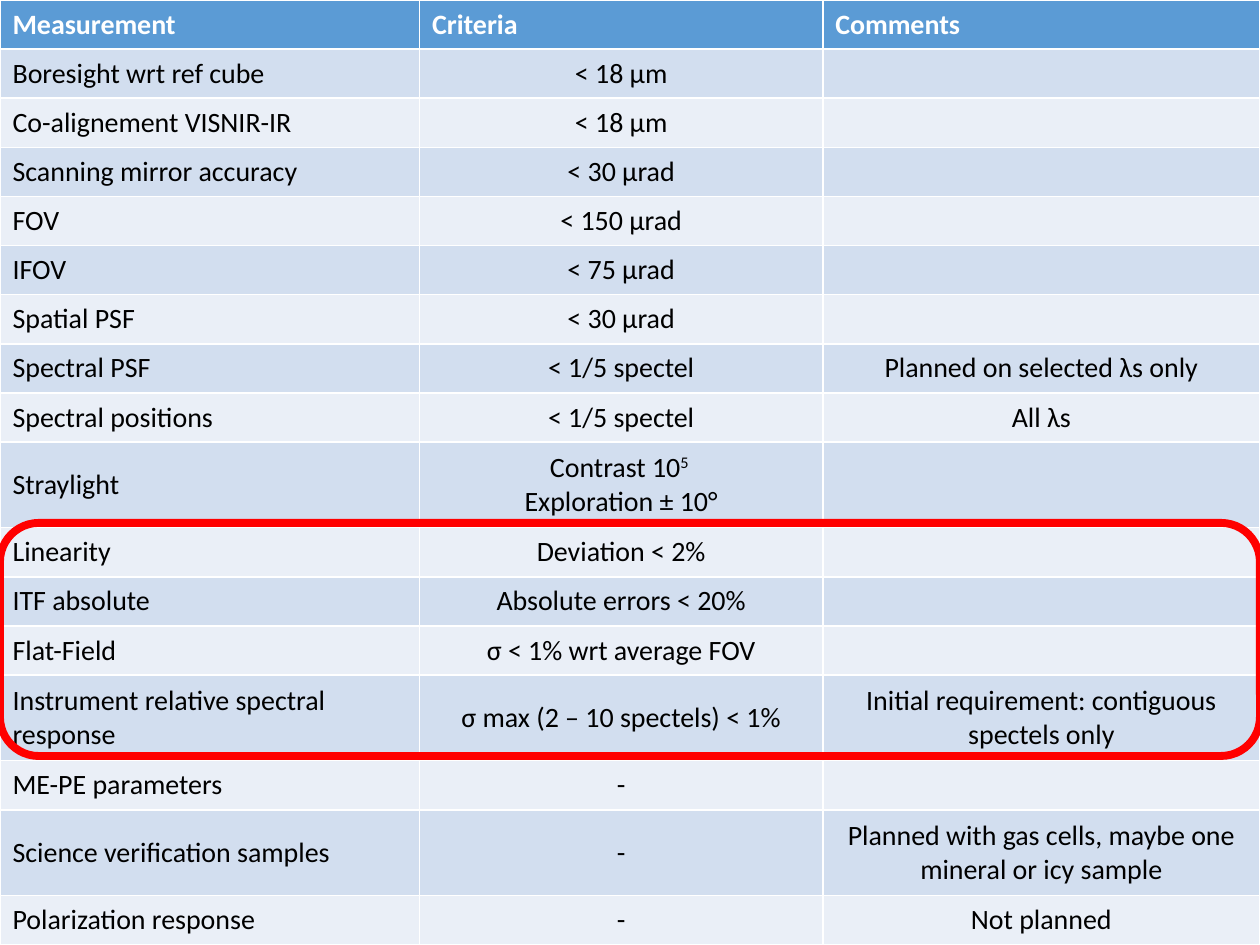
from dataclasses import dataclass

from pptx import Presentation
from pptx.dml.color import RGBColor
from pptx.enum.shapes import MSO_SHAPE as Shape
from pptx.enum.text import MSO_ANCHOR as Anchor, PP_ALIGN as Align
from pptx.util import Inches, Pt


@dataclass(frozen=True)
class Theme:
    """Colours and type sizes of the slide."""
    font: str = "Calibri"
    size: float = 16
    header: str = "5B9BD5"
    bands: tuple = ("EAEFF7", "D2DEEF")
    header_text: str = "FFFFFF"
    text: str = "000000"
    highlight: str = "FF0000"
    highlight_width: float = 4.5


THEME = Theme()
COLUMNS = (3.33, 3.2, 3.47)
ROW, TALL_ROW = 0.39, 0.68
TALL = ("Straylight", "Instrument relative spectral response",
        "Science verification samples")
ROWS = (
    ("Measurement", "Criteria", "Comments"),
    ("Boresight wrt ref cube", "< 18 µm", ""),
    ("Co-alignement VISNIR-IR", "< 18 µm", ""),
    ("Scanning mirror accuracy", "< 30 µrad", ""),
    ("FOV", "< 150 µrad", ""),
    ("IFOV", "< 75 µrad", ""),
    ("Spatial PSF", "< 30 µrad", ""),
    ("Spectral PSF", "< 1/5 spectel", "Planned on selected λs only"),
    ("Spectral positions", "< 1/5 spectel", "All λs"),
    ("Straylight", "Contrast 10^5 \nExploration ± 10°", ""),
    ("Linearity", "Deviation < 2%", ""),
    ("ITF absolute", "Absolute errors < 20%", ""),
    ("Flat-Field", "σ < 1% wrt average FOV", ""),
    ("Instrument relative spectral response", "σ max (2 – 10 spectels) < 1%",
     "Initial requirement: contiguous spectels only"),
    ("ME-PE parameters", "-", ""),
    ("Science verification samples", "-",
     "Planned with gas cells, maybe one mineral or icy sample"),
    ("Polarization response", "-", "Not planned"),
)


def rgb(value):
    """Turn a hex string into a colour."""
    return RGBColor.from_string(value)


def write_line(p, line, is_header, align):
    """Write one paragraph, raising whatever follows a caret."""
    p.alignment = align
    p.font.name, p.font.size, p.font.bold = THEME.font, Pt(THEME.size), is_header
    p.font.color.rgb = rgb(THEME.header_text if is_header else THEME.text)
    base, _, raised = line.partition("^")
    if base:
        p.add_run().text = base
    if raised:
        r = p.add_run()
        r.text = raised
        r._r.get_or_add_rPr().set("baseline", "30000")


def fill_cell(cell, text, row, col):
    """Fill and write one table cell."""
    is_header = row == 0
    cell.fill.solid()
    cell.fill.fore_color.rgb = rgb(THEME.header if is_header else THEME.bands[row % 2])
    cell.vertical_anchor = Anchor.MIDDLE
    if not text:
        cell.margin_top = cell.margin_bottom = 0
    align = Align.LEFT if is_header or col == 0 else Align.CENTER
    tf = cell.text_frame
    for i, line in enumerate(text.split("\n")):
        p = tf.add_paragraph() if i else tf.paragraphs[0]
        write_line(p, line, is_header, align)


def add_criteria_table(s, left, top, width, height):
    """Add the table of measurements and criteria in the given box."""
    table = s.shapes.add_table(len(ROWS), len(COLUMNS), Inches(left), Inches(top),
                               Inches(width), Inches(height)).table
    for column, share in zip(table.columns, COLUMNS):
        column.width = Inches(width * share / sum(COLUMNS))
    heights = [TALL_ROW if values[0] in TALL else ROW for values in ROWS]
    for row, values in enumerate(ROWS):
        table.rows[row].height = Inches(height * heights[row] / sum(heights))
        for col, text in enumerate(values):
            fill_cell(table.cell(row, col), text, row, col)


def add_highlight(s, left, top, width, height):
    """Add a rounded outline around the given box."""
    sp = s.shapes.add_shape(Shape.ROUNDED_RECTANGLE, Inches(left), Inches(top),
                            Inches(width), Inches(height))
    sp.shadow.inherit = False
    sp.fill.background()
    sp.line.color.rgb = rgb(THEME.highlight)
    sp.line.width = Pt(THEME.highlight_width)


def main():
    """Build and save the slide."""
    prs = Presentation()
    prs.slide_width, prs.slide_height = Inches(10), Inches(7.5)
    s = prs.slides.add_slide(prs.slide_layouts[6])
    add_criteria_table(s, 0, 0, 10, 7.5)
    add_highlight(s, 0, 4.15, 10, 1.85)
    prs.save("out.pptx")


if __name__ == "__main__":
    main()
